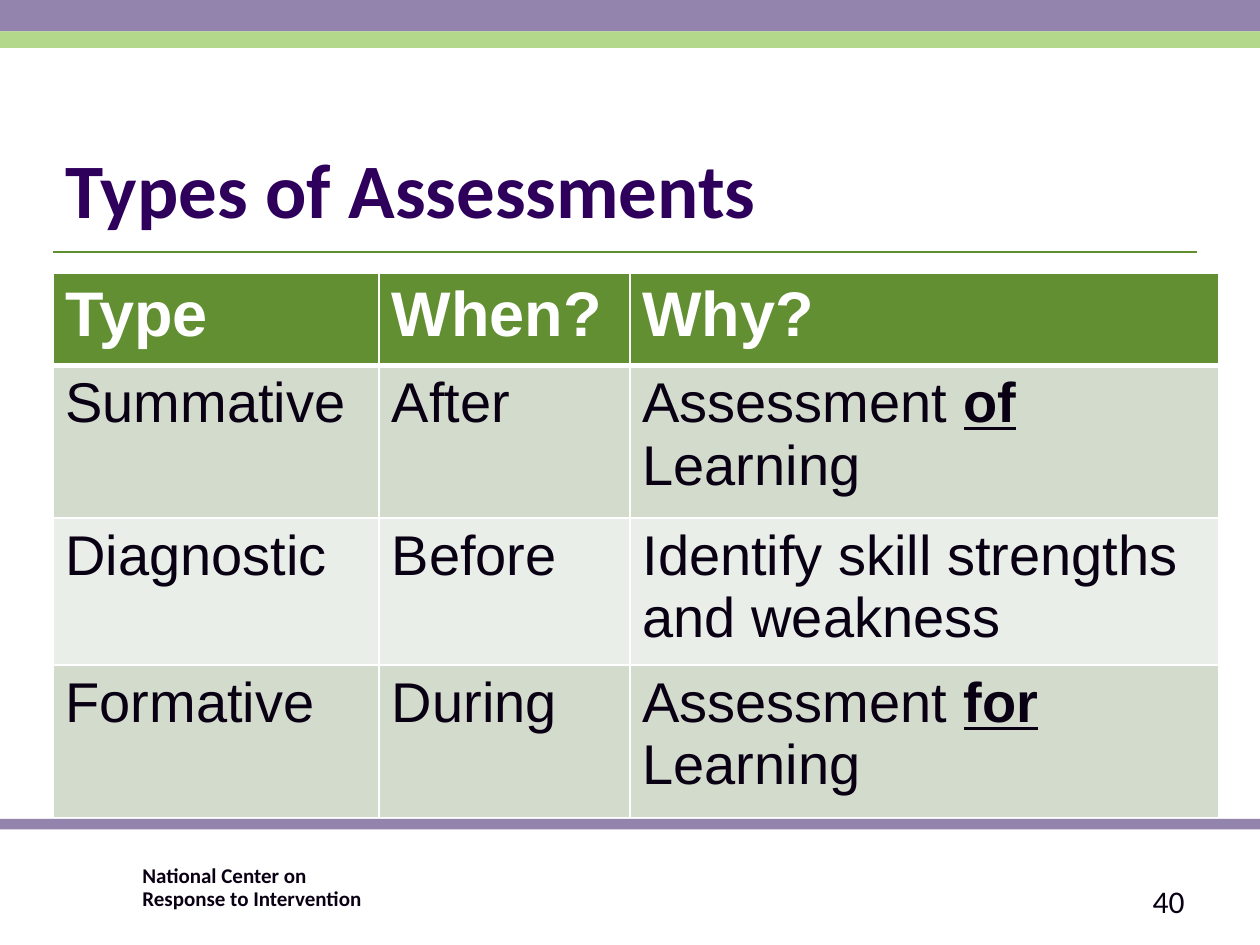
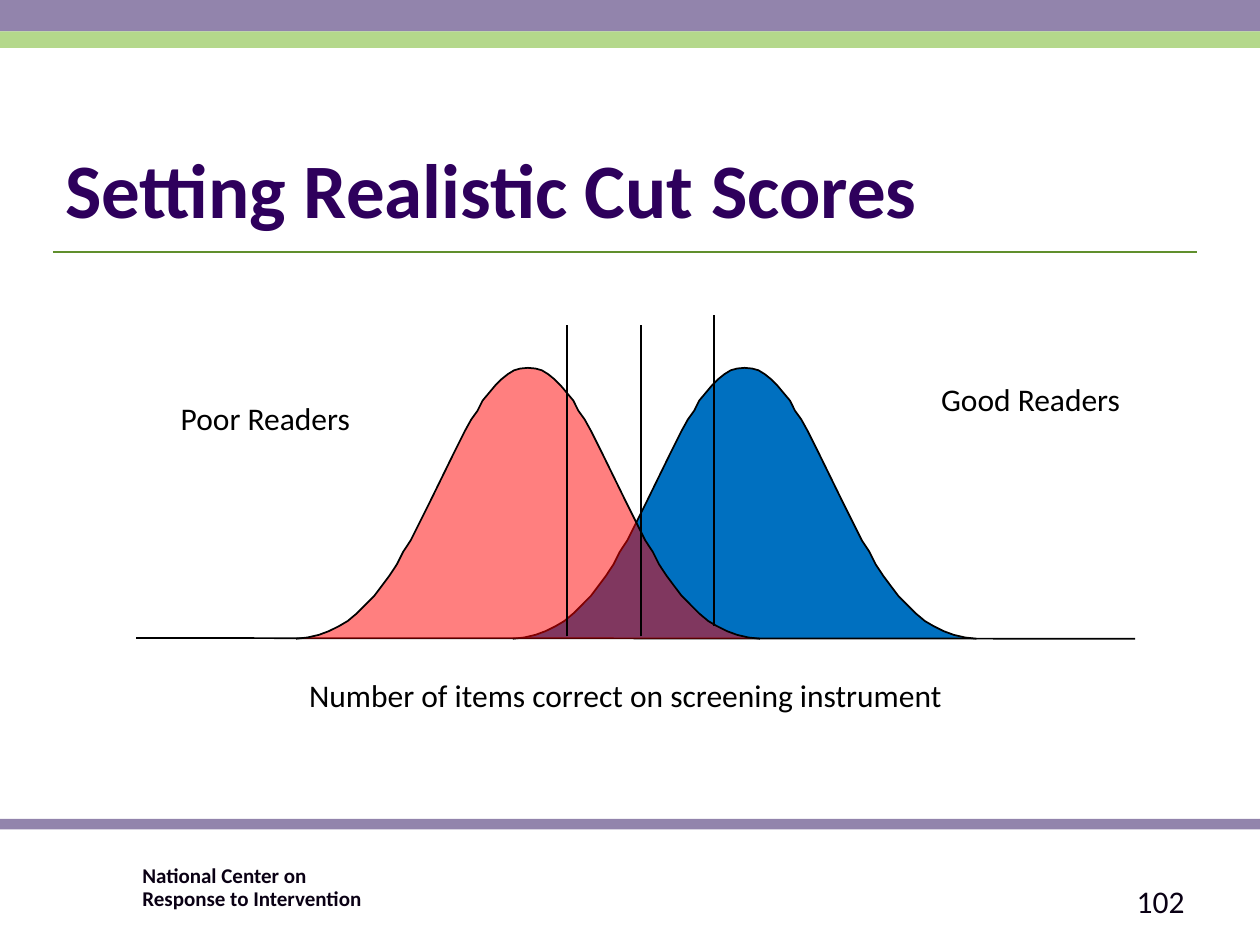
from lxml.etree import SubElement
from pptx import Presentation
from pptx.dml.color import RGBColor
from pptx.enum.shapes import MSO_CONNECTOR as Connector, MSO_SHAPE as Preset
from pptx.enum.text import MSO_ANCHOR as Anchor, PP_ALIGN as Align
from pptx.oxml.ns import qn
from pptx.util import Pt

WHITE = RGBColor(0xFF, 0xFF, 0xFF)
BLACK = RGBColor(0x00, 0x00, 0x00)
INK = RGBColor(0x0A, 0x00, 0x14)
TITLE_PURPLE = RGBColor(0x2E, 0x00, 0x5C)
BAND_PURPLE = RGBColor(0x92, 0x84, 0xAC)
BAND_GREEN = RGBColor(0xB4, 0xD8, 0x8B)
RULE_GREEN = RGBColor(0x60, 0x8F, 0x2D)
HEADER_GREEN = RGBColor(0x62, 0x8F, 0x31)
ROW_DARK = RGBColor(0xD3, 0xDB, 0xCD)
ROW_LIGHT = RGBColor(0xEA, 0xEE, 0xE8)
POOR_RED = RGBColor(0xFF, 0x00, 0x00)
GOOD_BLUE = RGBColor(0x00, 0x70, 0xC0)

WIDTH, HEIGHT = 720, 540
LEFT = 30.2

ASSESSMENTS = [
    ("Type", "When?", "Why?"),
    ("Summative", "After", "Assessment *of* Learning"),
    ("Diagnostic", "Before", "Identify skill strengths and weakness"),
    ("Formative", "During", "Assessment *for* Learning"),
]
COLUMN_WIDTHS = [186.5, 143.3, 336.2]
ROW_HEIGHTS = [52.6, 87.1, 70.6, 87.1]

BASELINE = 365
HALF_BELL = [
    (0, 154.8), (4.3, 154.4), (7.9, 153.4), (11.5, 151.2), (15.1, 148.3),
    (18.7, 144.7), (22.3, 140.4), (25.9, 136.1), (28.8, 130.3),
    (32.4, 125.3), (36, 118.8), (42.5, 105.8), (56.2, 77.8), (63.4, 63.4),
    (67, 56.2), (71.3, 49.7), (74.9, 42.5), (79.2, 36), (83.5, 30.2),
    (87.8, 24.5), (92.9, 19.4), (97.9, 14.4), (103, 10.1), (108, 7.2),
    (113.8, 4.3), (119.5, 2.2), (126, 0.7), (132.5, 0),
]


class Deck:
    font = "Calibri"
    table_font = "Arial"

    def __init__(self):
        self.presentation = Presentation()
        self.presentation.slide_width = Pt(WIDTH)
        self.presentation.slide_height = Pt(HEIGHT)
        self.slide = None

    def new_slide(self, title, number):
        layout = self.presentation.slide_layouts[6]
        self.slide = self.presentation.slides.add_slide(layout)
        self.band(468, 6, BAND_PURPLE)
        self.band(0, 18, BAND_PURPLE)
        self.text("National Center on \vResponse to Intervention",
                  78.5, 491.8, 233.3, 21.6, 12, INK, bold=True,
                  inset=2.9, line_spacing=0.9)
        self.band(18, 9.4, BAND_GREEN)
        self.line(LEFT, 144, 684, 144, RULE_GREEN, 0.75)
        self.text(title, LEFT, 59.8, 653.8, 77.8, 44, TITLE_PURPLE,
                  bold=True, anchor=Anchor.BOTTOM, line_spacing=0.9)
        self.text(number, 516.2, 500.4, 167.8, 28.8, 18, INK,
                  align=Align.RIGHT, anchor=Anchor.MIDDLE)

    def band(self, top, height, color):
        shape = self.slide.shapes.add_shape(
            Preset.RECTANGLE, 0, Pt(top), Pt(WIDTH), Pt(height))
        shape.shadow.inherit = False
        shape.fill.solid()
        shape.fill.fore_color.rgb = color
        shape.line.fill.background()

    def line(self, x1, y1, x2, y2, color=BLACK, width=1):
        connector = self.slide.shapes.add_connector(
            Connector.STRAIGHT, Pt(x1), Pt(y1), Pt(x2), Pt(y2))
        connector.line.color.rgb = color
        connector.line.width = Pt(width)
        SubElement(connector._element.spPr, qn("a:effectLst"))

    def text(self, text, left, top, width, height, size, color, bold=False,
             align=Align.LEFT, anchor=Anchor.TOP, inset=None,
             line_spacing=None):
        box = self.slide.shapes.add_textbox(
            Pt(left), Pt(top), Pt(width), Pt(height))
        frame = box.text_frame
        frame.word_wrap = True
        frame.vertical_anchor = anchor
        if inset is not None:
            frame.margin_left = frame.margin_right = Pt(inset)
            frame.margin_top = frame.margin_bottom = Pt(inset)
        frame.text = text
        paragraph = frame.paragraphs[0]
        paragraph.alignment = align
        paragraph.line_spacing = line_spacing
        for run in paragraph.runs:
            self.style(run, self.font, size, color, bold)

    def style(self, run, name, size, color, bold):
        run.font.name = name
        run.font.size = Pt(size)
        run.font.color.rgb = color
        run.font.bold = bold

    def bell(self, center, color, opacity=100):
        left_half = [(center - x, BASELINE - y) for x, y in reversed(HALF_BELL)]
        right_half = [(center + x, BASELINE - y) for x, y in HALF_BELL[1:]]
        start, *points = [(Pt(x), Pt(y)) for x, y in left_half + right_half]
        builder = self.slide.shapes.build_freeform(*start)
        builder.add_line_segments(points, close=False)
        shape = builder.convert_to_shape()
        shape.shadow.inherit = False
        shape.fill.solid()
        shape.fill.fore_color.rgb = color
        shape.line.color.rgb = BLACK
        shape.line.width = Pt(1)
        if opacity < 100:
            fill_color = shape._element.spPr.find(qn("a:solidFill"))[0]
            SubElement(fill_color, qn("a:alpha"), val=str(opacity * 1000))

    def table(self, rows, left, top, widths, heights):
        table = self.slide.shapes.add_table(
            len(rows), len(widths), Pt(left), Pt(top),
            Pt(sum(widths)), Pt(sum(heights))).table
        table.horz_banding = False
        for column, width in zip(table.columns, widths):
            column.width = Pt(width)
        for index, (row, height) in enumerate(zip(table.rows, heights)):
            row.height = Pt(height)
            for cell, text in zip(row.cells, rows[index]):
                self.cell(cell, text, index)

    def cell(self, cell, text, row):
        header = row == 0
        cell.fill.solid()
        cell.fill.fore_color.rgb = (
            HEADER_GREEN if header else ROW_DARK if row % 2 else ROW_LIGHT)
        paragraph = cell.text_frame.paragraphs[0]
        for index, part in enumerate(text.split("*")):
            emphasis = index % 2 == 1
            run = paragraph.add_run()
            run.text = part
            self.style(run, self.table_font, 36 if header else 32,
                       WHITE if header else INK, header or emphasis)
            run.font.underline = emphasis
        self.borders(cell, top=3 if row == 1 else 1, bottom=3 if header else 1)

    def borders(self, cell, top, bottom):
        properties = cell._tc.get_or_add_tcPr()
        widths = {"a:lnL": 1, "a:lnR": 1, "a:lnT": top, "a:lnB": bottom}
        for index, (tag, width) in enumerate(widths.items()):
            border = SubElement(properties, qn(tag), w=str(Pt(width)))
            fill = SubElement(border, qn("a:solidFill"))
            SubElement(fill, qn("a:srgbClr"), val=str(WHITE))
            properties.insert(index, border)


def assessment_types(deck):
    deck.new_slide("Types of Assessments", "40")
    deck.table(ASSESSMENTS, LEFT, 156.3, COLUMN_WIDTHS, ROW_HEIGHTS)


def cut_scores(deck):
    deck.new_slide("Setting Realistic Cut Scores", "102")
    deck.bell(425.5, GOOD_BLUE)
    deck.line(77.8, 364.6, 648.7, BASELINE)
    deck.bell(301.7, POOR_RED, opacity=50)
    for label, left, top, width, height in [
        ("Poor Readers", 77.8, 224.6, 147.6, 89.3),
        ("Good Readers", 500.4, 213.8, 177.1, 89.3),
        ("Number of items correct on screening instrument",
         72, 383, 571, 46.8),
    ]:
        deck.text(label, left, top, width, height, 18, BLACK,
                  align=Align.CENTER)
    for index, top in enumerate([185.8, 185.8, 180]):
        x = 324 + 42.1 * index
        deck.line(x, top + 177.8, x, top)


def main():
    deck = Deck()
    assessment_types(deck)
    cut_scores(deck)
    deck.presentation.save("out.pptx")


if __name__ == "__main__":
    main()
